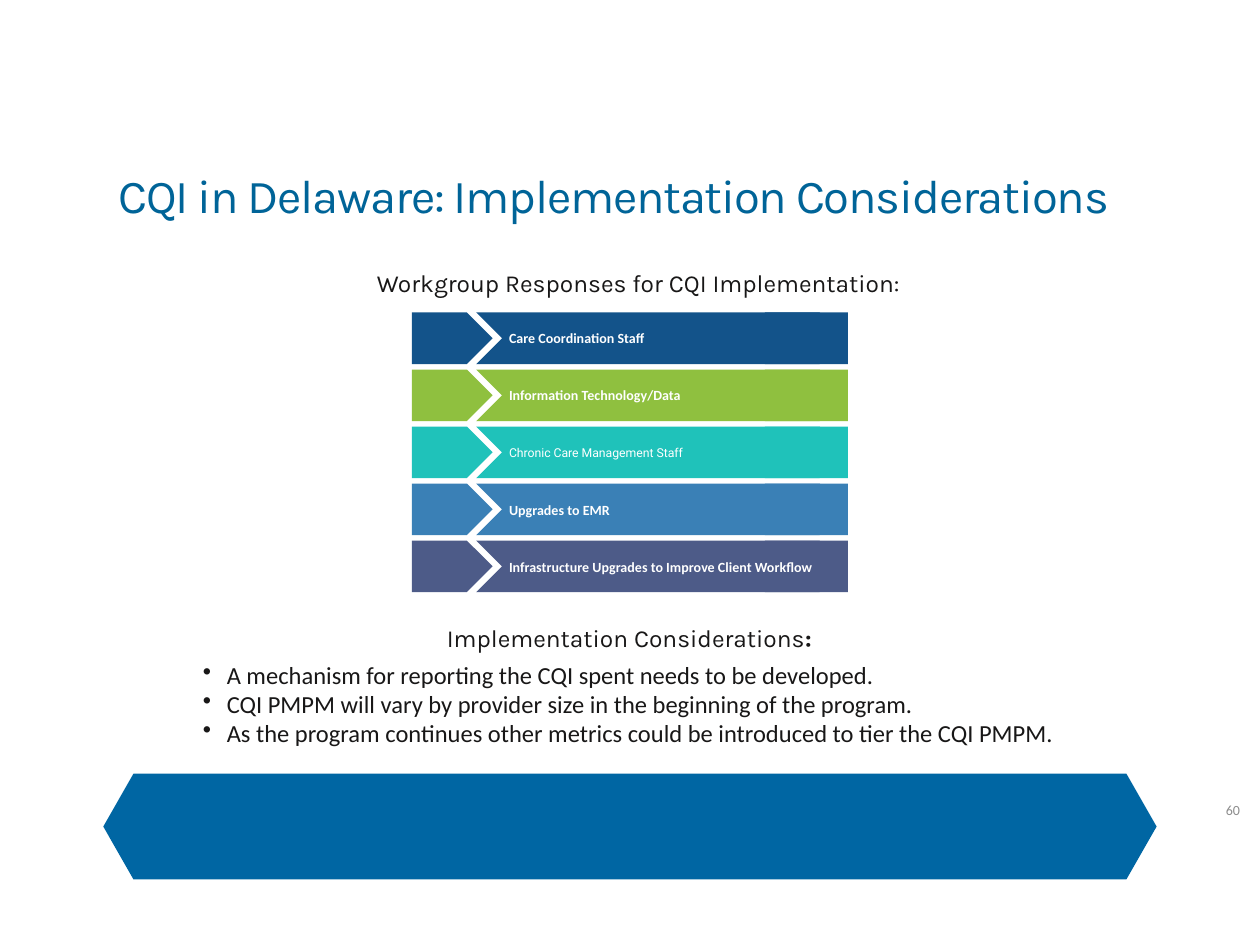
"""Build the slide on implementation considerations for CQI in Delaware."""
import dataclasses

import pptx
import pptx.dml.color
import pptx.enum.shapes
import pptx.enum.text
import pptx.oxml
import pptx.oxml.ns
import pptx.util

TITLE = "CQI in Delaware: Implementation Considerations"
RESPONSES_HEADING = "Workgroup Responses for CQI Implementation:"
RESPONSES = [
    ("Care Coordination Staff", "13538A", "strong"),
    ("Information Technology/Data", "8FC03F", "strong"),
    ("Chronic Care Management Staff", "1FC2BA", "light"),
    ("Upgrades to EMR", "3A80B6", "strong"),
    ("Infrastructure Upgrades to Improve Client Workflow", "4D5B88", "strong"),
]
CONSIDERATIONS_HEADING = ("Implementation Considerations", ":")
CONSIDERATIONS = [
    "A mechanism for reporting the CQI spent needs to be developed.",
    "CQI PMPM will vary by provider size in the beginning of the program.",
    "As the program continues other metrics could be introduced to tier the CQI PMPM.",
]
PAGE_NUMBER = "60"


@dataclasses.dataclass(frozen=True)
class Theme:
    """Text styles as font, size, colour and weight, plus the band colour."""
    title: tuple = ("Karla", 27, "006498", False)
    heading: tuple = ("Karla", 14, "181717", False)
    body: tuple = ("Calibri", 14, "181717", False)
    strong: tuple = ("Calibri", 8, "FFFFFF", True)
    light: tuple = ("Roboto", 7, "FFFFFF", False)
    number: tuple = ("Calibri", 8, "8C8C8C", False)
    band: str = "0066A3"


THEME = Theme()
ALIGN = pptx.enum.text.PP_ALIGN
ANCHOR = pptx.enum.text.MSO_ANCHOR
SHAPE = pptx.enum.shapes.MSO_SHAPE
WIDTH, HEIGHT = 10, 7.5
ROW_TOP, ROW_PITCH, ROW_HEIGHT = 2.48, 0.4525, 0.41
ROW_PARTS = [
    (SHAPE.PENTAGON, 3.27, 0.64),
    (SHAPE.CHEVRON, 3.78, 2.93),
    (SHAPE.RECTANGLE, 6.07, 0.66),
]
LABEL_LEFT, LABEL_WIDTH, LABEL_HEIGHT = 3.99, 2.74, 0.22
BAND_TOP, BAND_HEIGHT, BAND_MARGIN, BAND_POINT = 6.14, 0.84, 0.82, 0.24
INDENT = 0.19


def inches(*lengths):
    return [pptx.util.Inches(length) for length in lengths]


def paint(shape, color):
    shape.shadow.inherit = False
    shape.fill.solid()
    shape.fill.fore_color.rgb = pptx.dml.color.RGBColor.from_string(color)
    shape.line.fill.background()


def style(font, look):
    font.name, size, color, font.bold = look
    font.size = pptx.util.Pt(size)
    font.color.rgb = pptx.dml.color.RGBColor.from_string(color)


def set_frame(frame, anchor, inset):
    frame.word_wrap = True
    frame.auto_size = pptx.enum.text.MSO_AUTO_SIZE.NONE
    frame.vertical_anchor = anchor
    frame.margin_left = frame.margin_right = pptx.util.Inches(inset)
    frame.margin_top = frame.margin_bottom = pptx.util.Inches(inset)


def add_text(slide, box, text, look, inset=0.05, align=ALIGN.LEFT):
    frame = slide.shapes.add_textbox(*inches(*box)).text_frame
    set_frame(frame, ANCHOR.MIDDLE, inset)
    paragraph = frame.paragraphs[0]
    paragraph.text = text
    paragraph.alignment = align
    style(paragraph.font, look)


def add_title(slide):
    title = slide.shapes.title
    title.left, title.top, title.width, title.height = inches(0.94, 1.32, 8.13, 0.45)
    set_frame(title.text_frame, ANCHOR.TOP, 0)
    paragraph = title.text_frame.paragraphs[0]
    run = paragraph.add_run()
    run.text = TITLE
    paragraph.alignment = ALIGN.LEFT
    style(paragraph.font, THEME.title)
    run.font._element.set("spc", "-70")


def add_band(slide):
    left, right = BAND_MARGIN, WIDTH - BAND_MARGIN
    top, bottom = BAND_TOP, BAND_TOP + BAND_HEIGHT
    middle = (top + bottom) / 2
    corners = [
        (left + BAND_POINT, top), (right - BAND_POINT, top), (right, middle),
        (right - BAND_POINT, bottom), (left + BAND_POINT, bottom), (left, middle),
    ]
    points = [inches(*corner) for corner in corners]
    builder = slide.shapes.build_freeform(*points[0])
    builder.add_line_segments(points[1:], close=True)
    paint(builder.convert_to_shape(), THEME.band)


def add_responses(slide):
    add_text(slide, (2.94, 2.12, 4.71, 0.24), RESPONSES_HEADING, THEME.heading)
    for index, (label, color, look) in enumerate(RESPONSES):
        top = ROW_TOP + index * ROW_PITCH
        for kind, left, width in ROW_PARTS:
            paint(slide.shapes.add_shape(kind, *inches(left, top, width, ROW_HEIGHT)), color)
        label_top = top + (ROW_HEIGHT - LABEL_HEIGHT) / 2
        box = (LABEL_LEFT, label_top, LABEL_WIDTH, LABEL_HEIGHT)
        add_text(slide, box, label, getattr(THEME, look))


def add_considerations(slide):
    frame = slide.shapes.add_textbox(*inches(1.61, 4.93, 6.77, 1.26)).text_frame
    set_frame(frame, ANCHOR.TOP, 0)
    heading = frame.paragraphs[0]
    heading.alignment = ALIGN.CENTER
    heading.line_spacing = 1.07
    heading.space_after = pptx.util.Pt(4)
    for text in CONSIDERATIONS_HEADING:
        heading.add_run().text = text
    style(heading.font, THEME.heading)
    heading.runs[-1].font.bold = True
    for text in CONSIDERATIONS:
        paragraph = frame.add_paragraph()
        paragraph.text = text
        properties = paragraph._p.get_or_add_pPr()
        properties.set("marL", str(pptx.util.Inches(INDENT)))
        properties.set("indent", str(pptx.util.Inches(-INDENT)))
        bullet = pptx.oxml.parse_xml(f'<a:buChar {pptx.oxml.ns.nsdecls("a")} char="•"/>')
        properties.append(bullet)
        style(paragraph.font, THEME.body)


def main():
    presentation = pptx.Presentation()
    presentation.slide_width, presentation.slide_height = inches(WIDTH, HEIGHT)
    slide = presentation.slides.add_slide(presentation.slide_layouts[5])
    add_band(slide)
    add_title(slide)
    add_text(slide, (8.82, 6.33, 1.12, 0.2), PAGE_NUMBER, THEME.number, 0.1, ALIGN.RIGHT)
    add_responses(slide)
    add_considerations(slide)
    presentation.save("out.pptx")


if __name__ == "__main__":
    main()
